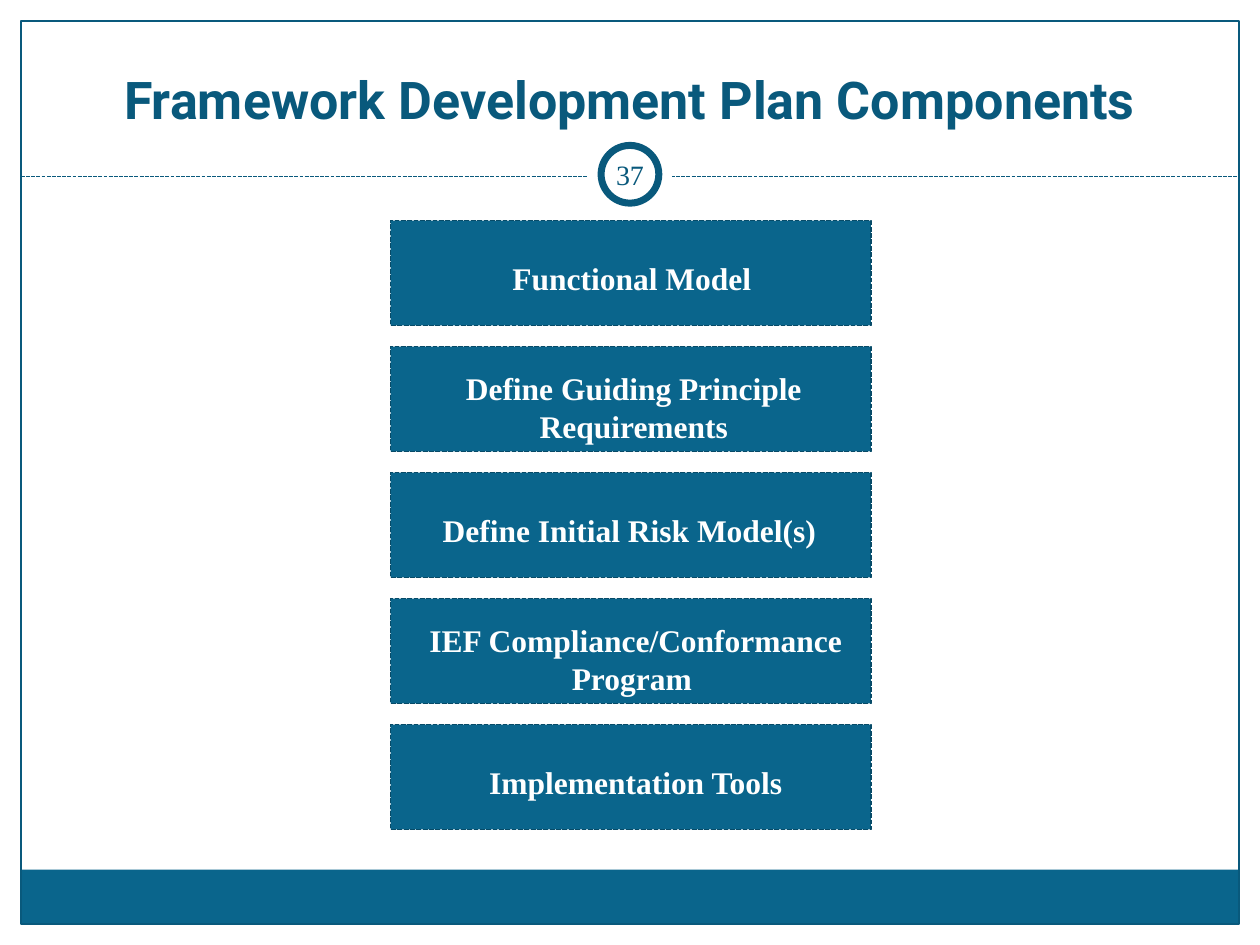
from lxml.etree import SubElement
from pptx import Presentation
from pptx.dml.color import RGBColor
from pptx.enum.dml import MSO_LINE
from pptx.enum.shapes import MSO_CONNECTOR, MSO_SHAPE
from pptx.enum.text import MSO_ANCHOR as ANCHOR, PP_ALIGN
from pptx.oxml.ns import qn
from pptx.util import Pt

WHITE = RGBColor(0xFF, 0xFF, 0xFF)
TEAL = RGBColor(0x0A, 0x65, 0x8C)
DARK = RGBColor(0x09, 0x59, 0x7C)
EDGE = RGBColor(0x07, 0x4B, 0x68)
SERIF = "Times New Roman"

# text, left offset from the block, width, number of lines
COMPONENTS = [
    ("Functional Model", 0.7, 274.3, 1),
    ("Define Guiding Principle Requirements", 6.5, 265, 2),
    ("Define Initial Risk Model(s)", -1.4, 275.8, 1),
    (" IEF Compliance/Conformance Program", 0.7, 274.3, 2),
    (" Implementation Tools", 0.7, 274.3, 1),
]


def style_line(line, color, width, dash=None):
    line.color.rgb = color
    line.width = Pt(width)
    if dash:
        line.dash_style = dash


def add_shape(slide, kind, box, fill=None, line=None):
    """Add a flat preset shape; line is (color, width[, dash])."""
    sp = slide.shapes.add_shape(kind, *map(Pt, box))
    sp.shadow.inherit = False
    if fill is None:
        sp.fill.background()
    else:
        sp.fill.solid()
        sp.fill.fore_color.rgb = fill
    if line:
        style_line(sp.line, *line)
    else:
        sp.line.fill.background()
    return sp


def add_text(slide, box, text, size, color, font=SERIF, bold=False,
             anchor=ANCHOR.TOP, inset=None):
    tf = slide.shapes.add_textbox(*map(Pt, box)).text_frame
    tf.word_wrap = True
    tf.vertical_anchor = anchor
    if inset is not None:
        for side in ("left", "right", "top", "bottom"):
            setattr(tf, f"margin_{side}", Pt(inset))
    p = tf.paragraphs[0]
    p.alignment = PP_ALIGN.CENTER
    r = p.add_run()
    r.text = text
    for name, value in {"size": Pt(size), "name": font, "bold": bold}.items():
        setattr(r.font, name, value)
    r.font.color.rgb = color


def add_frame(slide, x, y, w, h):
    band = 31
    add_shape(slide, MSO_SHAPE.RECTANGLE, (x, y + h - band, w, band), TEAL)
    add_shape(slide, MSO_SHAPE.RECTANGLE, (x, y, w, h), line=(DARK, 0.75))


def add_header(slide, x, y, w, title, number):
    """Title, dashed rule and the page number ring centred on the rule."""
    rule_y = y + 88.8
    rule = slide.shapes.add_connector(
        MSO_CONNECTOR.STRAIGHT, Pt(x), Pt(rule_y), Pt(x + w), Pt(rule_y))
    style_line(rule.line, DARK, 0.75, MSO_LINE.SQUARE_DOT)
    SubElement(rule._element.spPr, qn("a:effectLst"))

    cx, cy = x + w / 2, rule_y - 1.2
    for d, line in ((48, None), (33, (DARK, 4))):
        add_shape(slide, MSO_SHAPE.OVAL, (cx - d / 2, cy - d / 2, d, d), WHITE, line)
    add_text(slide, (x + 12, y + 6, w - 24, 60), title, 29.7, DARK,
             font="Roboto", bold=True, anchor=ANCHOR.BOTTOM)
    add_text(slide, (cx - 18, cy - 17.5, 36, 35), number, 16, DARK,
             anchor=ANCHOR.MIDDLE, inset=3.6)


def add_components(slide, x, y, w, h, pitch):
    for i, (text, dx, text_w, lines) in enumerate(COMPONENTS):
        top = y + i * pitch
        add_shape(slide, MSO_SHAPE.RECTANGLE, (x, top, w, h), TEAL,
                  (EDGE, 0.9, MSO_LINE.SQUARE_DOT))
        dy, text_h = (18.7, 29) if lines == 1 else (9.4, 51)
        add_text(slide, (x + dx, top + dy, text_w, text_h), text, 18, WHITE,
                 bold=True)


def main():
    prs = Presentation()
    prs.slide_width, prs.slide_height = Pt(720), Pt(540)
    slide = prs.slides.add_slide(prs.slide_layouts[6])
    add_frame(slide, 12, 12, 696, 516)
    add_header(slide, 12, 12, 696, "Framework Development Plan Components", "37")
    add_components(slide, 223.2, 126, 274.5, 60, 72)
    prs.save("out.pptx")


if __name__ == "__main__":
    main()
